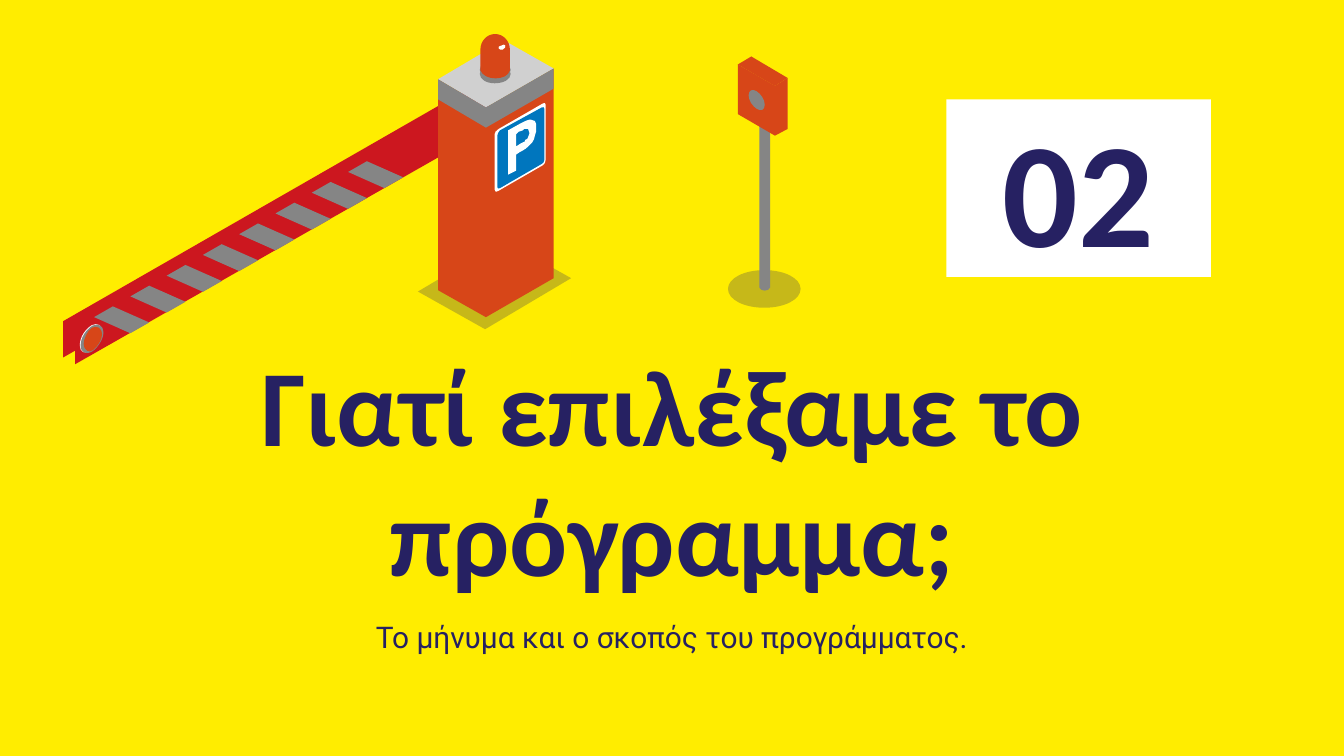
from dataclasses import dataclass

from lxml.etree import SubElement
from pptx import Presentation
from pptx.dml.color import RGBColor
from pptx.enum.shapes import MSO_SHAPE
from pptx.enum.text import MSO_ANCHOR, PP_ALIGN
from pptx.oxml.ns import qn
from pptx.shapes.autoshape import Shape
from pptx.slide import Slide
from pptx.util import Pt

UNIT = 0.72  # points per unit of the drawing grid


@dataclass(frozen=True)
class Theme:
    yellow: str = "FFED00"
    navy: str = "262162"
    white: str = "FFFFFF"
    crimson: str = "CC171F"
    orange: str = "D74618"
    gray: str = "858585"
    silver: str = "D0D0D0"
    blue: str = "0076BE"
    heading_font: str = "Calibri"
    body_font: str = "Roboto"
    number_size: float = 80
    title_size: float = 58
    subtitle_size: float = 16
    inset: float = 7.2
    shadow_opacity: int = 26


THEME = Theme()


@dataclass(frozen=True)
class Label:
    text: str
    left: float
    top: float
    width: float
    height: float
    font: str
    size: float
    bold: bool
    anchor: MSO_ANCHOR


@dataclass(frozen=True)
class Part:
    """One filled outline: M, L, C commands in grid units, moved by (dx, dy)."""
    outline: str
    color: str
    dx: float = 0
    dy: float = 0
    opacity: int = 100


@dataclass(frozen=True)
class Node:
    """A point of an outline and the command (M, L or C) it belongs to."""
    command: str
    x: float
    y: float


SUBTITLE = Label("Το μήνυμα και ο σκοπός του προγράμματος.", 71.3, 325, 577.4, 33.1,
                 THEME.body_font, THEME.subtitle_size, False, MSO_ANCHOR.BOTTOM)
TITLE = Label("Γιατί επιλέξαμε το πρόγραμμα;", 71.3, 174.2, 577.4, 152.6,
              THEME.heading_font, THEME.title_size, True, MSO_ANCHOR.TOP)
NUMBER = Label("02", 507, 53.2, 141.7, 95.2,
               THEME.heading_font, THEME.number_size, True, MSO_ANCHOR.MIDDLE)

ARM = "M 370 82 L 47 266 47 265 47 239 345 68"
STRIPE = "M 259 128 L 286 140 300 132 273 120"
RIVET_RIM = "M 68 242 C 72 240 76 242 76 247 76 252 72 258 68 261 63 264 59 262 59 257 59 251 63 245 68 242"
RIVET = "M 68 244 C 72 242 75 244 75 248 75 252 72 257 68 260 65 262 62 260 62 256 62 252 65 246 68 244"
LAMP_RING = "M 368 48 C 362 48 357 51 357 55 357 59 362 62 368 62 375 62 380 59 380 55 380 51 375 48 368 48"
LETTER_P = (
    "M 391 96 C 392 96 392 96 393 96 393 97 394 98 394 99 394 100 393 101 393 102 "
    "393 103 392 104 391 104 391 105 390 106 389 106 388 107 388 107 387 107 "
    "L 384 109 384 100 386 98 C 387 98 388 97 389 97 389 97 390 96 390 96 391 96 391 96 391 96 "
    "M 395 89 C 395 89 394 89 394 89 393 89 391 90 389 91 388 92 388 92 387 92 "
    "L 378 97 378 130 384 127 384 115 387 113 C 388 112 388 112 389 112 "
    "391 111 392 110 393 109 394 108 395 107 396 106 397 104 398 103 398 101 "
    "399 99 399 97 399 95 399 93 399 91 398 90 397 89 396 89 395 89")

BARRIER = [
    Part(ARM, THEME.crimson),
    Part(ARM, THEME.crimson, 9, 5),
    *(Part(STRIPE, THEME.gray, -27 * i, 15.43 * i) for i in range(8)),
    Part("M 425 207 L 361 245 311 217 375 179", THEME.navy, opacity=THEME.shadow_opacity),
    Part("M 361.6 236 L 361.6 80 326 59 326 216", THEME.orange),
    Part("M 412 51 L 361.6 80 361.6 236 412 207", THEME.orange),
    Part("M 326 59 L 361.6 80 412 51 375 30", THEME.silver),
    Part("M 404 77 L 371 96 C 369 97 368 99 368 100 L 368 141 C 368 143 369 143 371 142 "
         "L 404 123 C 405 122 406 121 406 119 L 406 78 C 406 77 405 76 404 77", THEME.white),
    Part("M 403 80 L 372 97 C 371 98 370 100 370 101 L 370 139 C 370 140 371 141 372 140 "
         "L 403 122 C 404 122 405 120 405 119 L 405 81 C 405 80 404 79 403 80", THEME.blue),
    Part(LETTER_P, THEME.white),
    Part(RIVET_RIM, THEME.white, 0.4),
    Part(RIVET_RIM, THEME.gray, 1, 0.3),
    Part(RIVET, THEME.orange, 0.3),
    Part(RIVET, THEME.orange, 1, 0.7),
    Part("M 361.6 95 L 412 66 412 51 361.6 80", THEME.gray),
    Part("M 361.6 95 L 326 74 326 59 361.6 80", THEME.gray),
    Part(LAMP_RING, THEME.gray),
    Part(LAMP_RING, THEME.gray, dy=-3),
    Part("M 368 25 L 368 25 C 362 25 357 30 357 37 L 357 52 C 360 60 377 60 379 52 "
         "L 379 37 C 379 30 374 25 368 25", THEME.orange, 0.4, 0.3),
    Part("M 368 27 L 368 27 C 363 27 359 32 359 37 359 48 368 56 378 53 "
         "L 378 37 C 378 32 374 27 368 27", THEME.orange),
    Part("M 373 34 C 371 34 371 35 371 36 371 37 373 37 374 37 "
         "376 36 376 35 376 34 376 33 374 33 373 34", THEME.white),
]
TICKET_POST = [
    Part("M 569 201 C 584 201 596 207 596 215 596 223 584 229 569 229 "
         "554 229 542 223 542 215 542 207 554 201 569 201", THEME.navy, -0.3,
         opacity=THEME.shadow_opacity),
    Part("M 569 69 L 569 69 C 567 69 565 70 565 73 L 565 214 C 566 217 572 217 573 214 "
         "L 573 73 C 573 70 571 69 569 69", THEME.gray),
    Part("M 576.6 101 L 576.6 64 549 48 549 85", THEME.orange),
    Part("M 586 58 L 576.6 64 576.6 101 586 96", THEME.orange),
    Part("M 586 58 L 576.6 64 549 48 559 42", THEME.orange),
    Part("M 563 68 C 560 66 557 67 557 71 557 75 560 79 563 81 "
         "566 83 569 82 569 78 569 74 566 70 563 68", THEME.gray),
]


def read_nodes(outline: str) -> list[Node]:
    nodes = []
    tokens = iter(outline.split())
    command = ""
    for token in tokens:
        if token.isalpha():
            command, token = token, next(tokens)
        nodes.append(Node(command, float(token), float(next(tokens))))
    return nodes


def bend_curves(shape: Shape, nodes: list[Node]) -> None:
    """Join each three line segments that stand for C nodes into one Bézier curve."""
    path_element = next(shape._element.iter(qn("a:path")))
    segments = [child for child in path_element if child.tag != qn("a:close")]
    curved = [segment for segment, node in zip(segments, nodes) if node.command == "C"]
    for first, second, third in zip(curved[::3], curved[1::3], curved[2::3]):
        curve = path_element.makeelement(qn("a:cubicBezTo"))
        first.addprevious(curve)
        for segment in (first, second, third):
            curve.append(segment[0])
            path_element.remove(segment)


def paint(shape: Shape, color: str, opacity: int = 100) -> None:
    shape.shadow.inherit = False
    shape.fill.solid()
    shape.fill.fore_color.rgb = RGBColor.from_string(color)
    shape.line.fill.background()
    if opacity < 100:
        color_element = shape.fill._xPr.find(qn("a:solidFill"))[0]
        SubElement(color_element, qn("a:alpha"), val=str(opacity * 1000))


def draw_group(slide: Slide, parts: list[Part]) -> None:
    group = slide.shapes.add_group_shape()
    for part in parts:
        nodes = read_nodes(part.outline)
        points = [(Pt(UNIT * (node.x + part.dx)), Pt(UNIT * (node.y + part.dy))) for node in nodes]
        starts = [index for index, node in enumerate(nodes) if node.command == "M"]
        builder = group.shapes.build_freeform(*points[0])
        for start, end in zip(starts, starts[1:] + [len(nodes)]):
            if start:
                builder.move_to(*points[start])
            builder.add_line_segments(points[start + 1:end], close=True)
        shape = builder.convert_to_shape()
        bend_curves(shape, nodes)
        paint(shape, part.color, part.opacity)


def write_label(shape: Shape, label: Label) -> None:
    frame = shape.text_frame
    frame_format = {"word_wrap": True, "vertical_anchor": label.anchor}
    frame_format |= {f"margin_{side}": Pt(THEME.inset) for side in ("left", "top", "right", "bottom")}
    for name, value in frame_format.items():
        setattr(frame, name, value)
    paragraph = frame.paragraphs[0]
    paragraph.alignment = PP_ALIGN.CENTER
    run = paragraph.add_run()
    run.text = label.text
    for name, value in {"name": label.font, "size": Pt(label.size), "bold": label.bold}.items():
        setattr(run.font, name, value)
    run.font.color.rgb = RGBColor.from_string(THEME.navy)


def main() -> None:
    presentation = Presentation()
    presentation.slide_width, presentation.slide_height = Pt(720), Pt(405)
    slide = presentation.slides.add_slide(presentation.slide_layouts[6])
    slide.background.fill.solid()
    slide.background.fill.fore_color.rgb = RGBColor.from_string(THEME.yellow)

    for label in (SUBTITLE, TITLE):
        box = [Pt(length) for length in (label.left, label.top, label.width, label.height)]
        write_label(slide.shapes.add_textbox(*box), label)
    number_card = slide.shapes.add_shape(
        MSO_SHAPE.RECTANGLE, Pt(NUMBER.left), Pt(NUMBER.top), Pt(NUMBER.width), Pt(NUMBER.height))
    paint(number_card, THEME.white)
    write_label(number_card, NUMBER)

    for parts in (BARRIER, TICKET_POST):
        draw_group(slide, parts)
    presentation.save("out.pptx")


if __name__ == "__main__":
    main()
